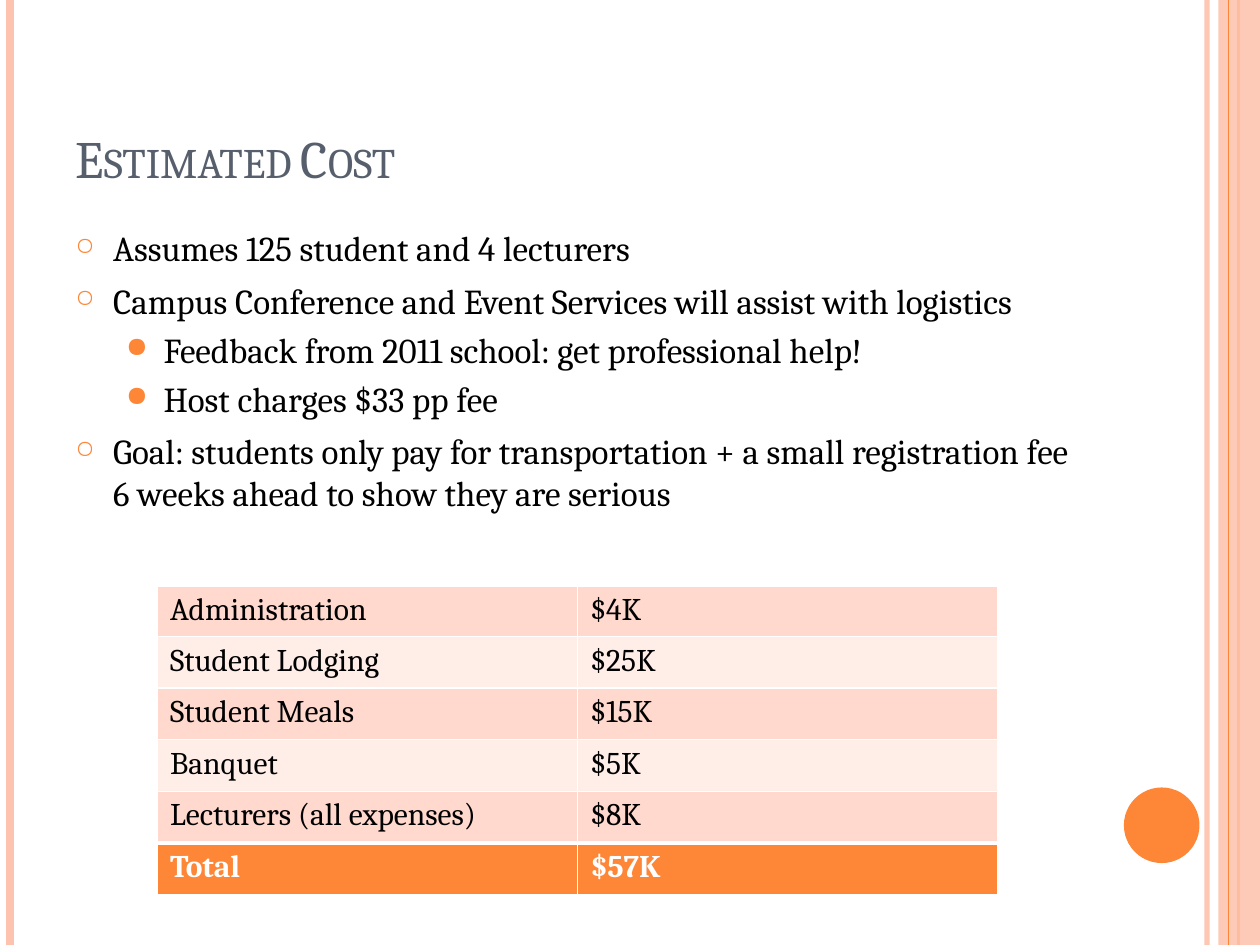
from lxml import etree
from pptx import Presentation
from pptx.dml.color import RGBColor
from pptx.enum.shapes import MSO_CONNECTOR, MSO_SHAPE
from pptx.enum.text import MSO_ANCHOR, PP_ALIGN
from pptx.oxml.ns import qn
from pptx.util import Inches, Pt

ORANGE = RGBColor(0xFE, 0x86, 0x37)
PEACH = RGBColor(0xFE, 0xC3, 0xAE)
SLATE = RGBColor(0x57, 0x5F, 0x6D)
BLACK = RGBColor(0, 0, 0)
WHITE = RGBColor(0xFF, 0xFF, 0xFF)
BAND_DARK = RGBColor(0xFF, 0xD9, 0xCE)
BAND_LIGHT = RGBColor(0xFF, 0xED, 0xE8)
FONT = "Cambria"


def style_font(font, size, color, bold=False):
    font.name = FONT
    font.size = Pt(size)
    font.bold = bold
    font.color.rgb = color


def set_opacity(element, percent):
    for color in element.iter(qn("a:srgbClr")):
        etree.SubElement(color, qn("a:alpha"), val=str(percent * 1000))


deck = Presentation()
deck.slide_width = Inches(10)
deck.slide_height = Inches(7.5)
page = deck.slides.add_slide(deck.slide_layouts[5])

# Side stripes: position, color, width, opacity; the band goes under the last
stripes = [
    (9.58, PEACH, 3, 93),
    (0.08, PEACH, 4.5, 100),
    (9.83, ORANGE, 1.5, 100),
    (9.75, ORANGE, 0.75, 100),
]
for left, color, width, opacity in stripes:
    if left == 9.75:
        band = page.shapes.add_shape(
            MSO_SHAPE.RECTANGLE, Inches(9.67), 0, Inches(0.33), Inches(7.5))
        band.shadow.inherit = False
        band.fill.solid()
        band.fill.fore_color.rgb = PEACH
        band.line.fill.background()
        set_opacity(band.fill._xPr, 87)
    stripe = page.shapes.add_connector(
        MSO_CONNECTOR.STRAIGHT, Inches(left), 0, Inches(left), Inches(7.5))
    stripe.line.color.rgb = color
    stripe.line.width = Pt(width)
    if opacity < 100:
        set_opacity(stripe.line._ln, opacity)
    etree.SubElement(stripe._element.spPr, qn("a:effectLst"))

# Corner disc
disc = page.shapes.add_shape(
    MSO_SHAPE.OVAL, Inches(8.92), Inches(6.25), Inches(0.6), Inches(0.6))
disc.shadow.inherit = False
disc.fill.solid()
disc.fill.fore_color.rgb = ORANGE
disc.line.fill.background()

# Title
title = page.shapes.title
title.left, title.top = Inches(0.5), Inches(0.3)
title.width, title.height = Inches(8.17), Inches(1.25)
title.text_frame.text = "Estimated Cost"
title.text_frame.vertical_anchor = MSO_ANCHOR.BOTTOM
para = title.text_frame.paragraphs[0]
para.alignment = PP_ALIGN.LEFT
span = para.runs[0]
style_font(span.font, 30, SLATE)
span.font._element.set("cap", "small")

# Bullet list: level and text
points = [
    (0, "Assumes 125 student and 4 lecturers"),
    (0, "Campus Conference and Event Services will assist with logistics"),
    (1, "Feedback from 2011 school: get professional help!"),
    (1, "Host charges $33 pp fee"),
    (0, "Goal: students only pay for transportation + a small registration fee "
        "6 weeks ahead to show they are serious"),
]
# Indent, space before, bullet and bullet size by level
levels = [(0.3, 6, "○", 70), (0.7, 4, "●", 80)]
box = page.shapes.add_textbox(
    Inches(0.5), Inches(1.75), Inches(8.17), Inches(5.33))
box.text_frame.word_wrap = True
box.text_frame.text = "\n".join(text for level, text in points)
for para, (level, text) in zip(box.text_frame.paragraphs, points):
    indent, space, bullet, size = levels[level]
    para.level = level
    para.space_before = Pt(space)
    style_font(para.runs[0].font, 20, BLACK)
    properties = para._p.get_or_add_pPr()
    properties.set("marL", str(Inches(indent)))
    properties.set("indent", str(Inches(-0.3)))
    bullet_color = etree.SubElement(properties, qn("a:buClr"))
    etree.SubElement(bullet_color, qn("a:srgbClr"), val=str(ORANGE))
    etree.SubElement(properties, qn("a:buSzPct"), val=str(size * 1000))
    etree.SubElement(properties, qn("a:buChar"), char=bullet)

# Cost table
costs = [
    ("Administration", "$4K"),
    ("Student Lodging", "$25K"),
    ("Student Meals", "$15K"),
    ("Banquet", "$5K"),
    ("Lecturers (all expenses)", "$8K"),
    ("Total", "$57K"),
]
last = len(costs) - 1
table = page.shapes.add_table(
    len(costs), 2, Inches(1.25), Inches(4.65), Inches(6.67), Inches(2.43)).table
table.first_row = False
for row, values in enumerate(costs):
    table.rows[row].height = Inches(0.41 if row else 0.38)
    is_total = row == last
    for column, value in enumerate(values):
        cell = table.cell(row, column)
        cell.text_frame.text = value
        style_font(cell.text_frame.paragraphs[0].runs[0].font, 18,
                   WHITE if is_total else BLACK, is_total)
        cell.fill.solid()
        cell.fill.fore_color.rgb = (
            ORANGE if is_total else (BAND_DARK, BAND_LIGHT)[row % 2])
        # White borders, thicker above the total
        widths = {"L": 1, "R": 1, "T": 3 if is_total else 1,
                  "B": 3 if row == last - 1 else 1}
        cell_properties = cell._tc.get_or_add_tcPr()
        for position, (side, width) in enumerate(widths.items()):
            border = etree.Element(qn("a:ln" + side), w=str(Pt(width)))
            border_fill = etree.SubElement(border, qn("a:solidFill"))
            etree.SubElement(border_fill, qn("a:srgbClr"), val=str(WHITE))
            cell_properties.insert(position, border)

deck.save("out.pptx")
